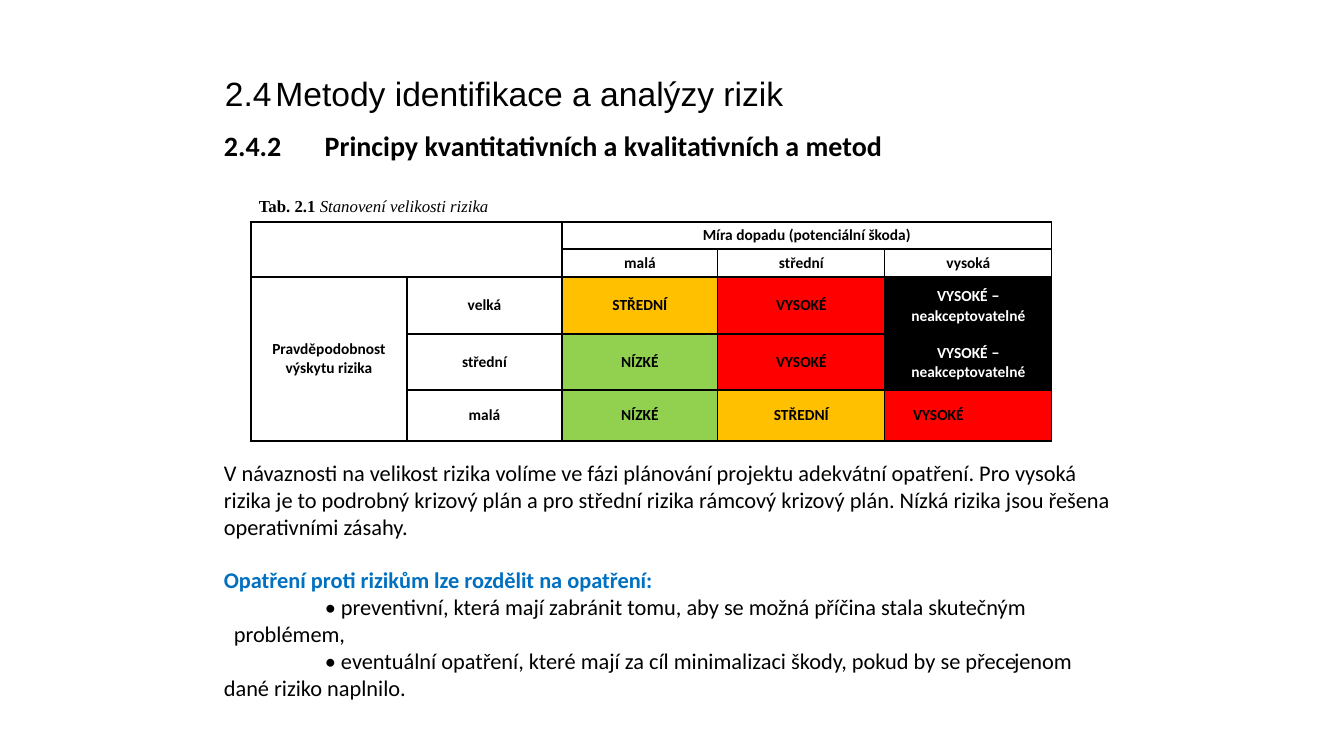
from dataclasses import dataclass

from lxml.etree import SubElement
from pptx import Presentation
from pptx.dml.color import RGBColor as Rgb
from pptx.enum.text import MSO_ANCHOR as Anchor, PP_ALIGN as Align
from pptx.oxml.ns import qn
from pptx.util import Emu, Pt

EMU_PER_PX = 914400 / 100.8


def px(count):
    return Emu(round(count * EMU_PER_PX))


@dataclass(frozen=True)
class Theme:
    black: str = "000000"
    white: str = "FFFFFF"
    blue: str = "0070C0"
    red: str = "FF0000"
    amber: str = "FFC000"
    green: str = "92D050"
    sans: str = "Arial"
    body: str = "Calibri"
    serif: str = "Times New Roman"
    title_size: int = 24
    heading_size: int = 20
    body_size: int = 16
    small_size: int = 12
    cell_size: int = 11
    border: int = 1


class SlideBuilder:
    def __init__(self, deck, theme):
        self.theme = theme
        self.page = deck.slides.add_slide(deck.slide_layouts[6])

    def add_span(self, para, text, color=None, **font):
        span = para.add_run()
        span.text = text
        values = {"name": self.theme.body, "size": self.theme.body_size} | font
        values["size"] = Pt(values["size"])
        for name, value in values.items():
            setattr(span.font, name, value)
        span.font.color.rgb = Rgb.from_string(color or self.theme.black)

    def add_text(self, left, top, width, height, paragraphs, anchor=Anchor.TOP):
        """Each paragraph is a list of (text, font) spans and a dict of layout values."""
        box = self.page.shapes.add_textbox(px(left), px(top), px(width), px(height))
        frame = box.text_frame
        frame.word_wrap, frame.vertical_anchor = True, anchor
        for index, (spans, layout) in enumerate(paragraphs):
            para = frame.add_paragraph() if index else frame.paragraphs[0]
            for text, font in spans:
                self.add_span(para, text, **font)
            para.space_before = Pt(layout.get("before", 0))
            props = para._p.get_or_add_pPr()
            for name in ("marL", "indent"):
                props.set(name, str(px(layout.get(name, 0))))
            if "tab" in layout:
                stops = SubElement(props, qn("a:tabLst"))
                SubElement(stops, qn("a:tab"), pos=str(px(layout["tab"])), algn="l")

    def add_table(self, left, top, columns, rows, merges):
        frame = self.page.shapes.add_table(len(rows), len(columns), px(left), px(top),
                                           px(sum(columns)), px(sum(rows)))
        table = frame.table
        table.first_row = table.horz_banding = False
        for column, width in zip(table.columns, columns):
            column.width = px(width)
        for row, height in zip(table.rows, rows):
            row.height = px(height)
        for first, last in merges:
            table.cell(*first).merge(table.cell(*last))
        return table

    def fill_cell(self, cell, spans, fill, color, right=7):
        values = {"margin_left": px(7), "margin_right": px(right), "margin_top": 0,
                  "margin_bottom": 0, "vertical_anchor": Anchor.MIDDLE}
        for name, value in values.items():
            setattr(cell, name, value)
        para = cell.text_frame.paragraphs[0]
        para.alignment = Align.CENTER
        for text, size in spans:
            self.add_span(para, text, color, size=size, bold=True)
        if not spans:
            SubElement(para._p, qn("a:endParaRPr"), sz=str(self.theme.cell_size * 100))
        props = cell._tc.get_or_add_tcPr()
        for side in ("lnL", "lnR", "lnT", "lnB"):
            line = SubElement(props, qn(f"a:{side}"), w=str(Pt(self.theme.border)))
            paint = SubElement(line, qn("a:solidFill"))
            SubElement(paint, qn("a:srgbClr"), val=self.theme.black)
        cell.fill.solid()
        cell.fill.fore_color.rgb = Rgb.from_string(fill)


def main():
    theme = Theme()
    deck = Presentation()
    deck.slide_width, deck.slide_height = px(1344), px(756)
    slide = SlideBuilder(deck, theme)

    # Title
    title_font = {"name": theme.sans, "size": theme.title_size}
    slide.add_text(215, 68, 817, 50,
                   [([("2.4\tMetody identifikace a analýzy rizik", title_font)], {})])

    # Section heading, and body text below the table
    heading_font = {"size": theme.heading_size, "bold": True}
    slide.add_text(214, 124, 911, 587, [
        ([("2.4.2\tPrincipy kvantitativních a kvalitativních a metod", heading_font)], {}),
        ([("V návaznosti na velikost rizika volíme ve fázi plánování projektu adekvátní "
           "opatření. Pro vysoká rizika je to podrobný krizový plán a pro střední rizika "
           "rámcový krizový plán. Nízká rizika jsou řešena operativními zásahy.", {})],
         {"before": 212}),
        ([("Opatření proti rizikům lze rozdělit na opatření:",
           {"color": theme.blue, "bold": True})], {"before": 19}),
        ([("• preventivní, která mají zabránit tomu, aby se možná příčina stala "
           "skutečným problémem,", {})], {"marL": 10, "indent": 91}),
        ([("• eventuální opatření, které mají za cíl minimalizaci škody, pokud by se "
           "přece\tjenom dané riziko naplnilo.", {})], {"indent": 101, "tab": 821}),
    ])

    # Table caption
    caption_font = {"name": theme.serif, "size": theme.small_size}
    slide.add_text(249, 190, 260, 31, [
        ([("Tab. 2.1 ", caption_font | {"bold": True}),
          ("Stanovení velikosti rizika", caption_font | {"italic": True})], {}),
    ], Anchor.MIDDLE)

    # Risk matrix
    unacceptable = "VYSOKÉ – neakceptovatelné"
    fills = {"NÍZKÉ": theme.green, "STŘEDNÍ": theme.amber,
             "VYSOKÉ": theme.red, unacceptable: theme.black}
    matrix = [
        ["", "", "Míra dopadu (potenciální škoda)", "", ""],
        ["", "", "malá", "střední", "vysoká"],
        ["Pravděpodobnost výskytu rizika", "velká", "STŘEDNÍ", "VYSOKÉ", unacceptable],
        ["", "střední", "NÍZKÉ", "VYSOKÉ", unacceptable],
        ["", "malá", "NÍZKÉ", "STŘEDNÍ", "VYSOKÉ"],
    ]
    merges = [((0, 0), (1, 1)), ((0, 2), (0, 4)), ((2, 0), (4, 0))]
    table = slide.add_table(251, 222, [156, 155, 156, 167, 167], [27, 28, 57, 56, 51], merges)
    for row, labels in enumerate(matrix):
        for column, label in enumerate(labels):
            before, dash, after = label.partition("–")
            sizes = (theme.cell_size, theme.small_size, theme.cell_size)
            spans = [pair for pair in zip((before, dash, after), sizes) if pair[0]]
            color = theme.white if label == unacceptable else theme.black
            right = 67 if (row, column) == (4, 4) else 7
            slide.fill_cell(table.cell(row, column), spans,
                            fills.get(label, theme.white), color, right)

    deck.save("out.pptx")


if __name__ == "__main__":
    main()
